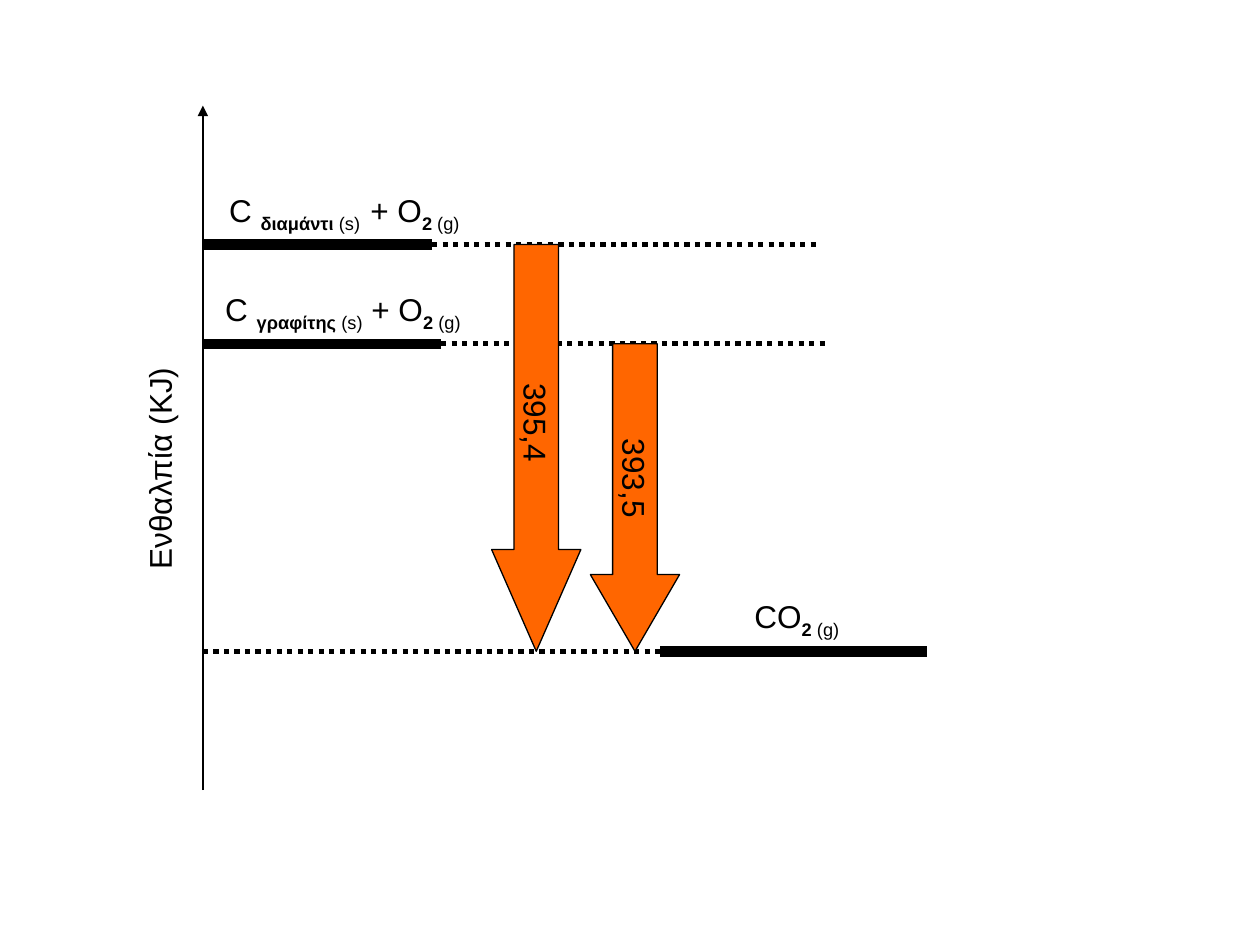
from pptx import Presentation
from pptx.dml.color import RGBColor
from pptx.enum.dml import MSO_LINE
from pptx.enum.shapes import MSO_CONNECTOR, MSO_SHAPE
from pptx.enum.text import MSO_ANCHOR, MSO_AUTO_SIZE, PP_ALIGN
from pptx.oxml.ns import qn
from pptx.util import Cm, Pt
from lxml.etree import SubElement

BLACK = "000000"
ORANGE = "FF6600"
AXIS_X = 4.09
DIAMOND_Y, GRAPHITE_Y, DIOXIDE_Y = 4.93, 6.93, 13.13
LABEL_HEIGHT = 1.02
LABEL_RISE = 1.21
ARROW_WIDTH = 1.8
OXYGEN = [("2 ", True, True), ("(g)", False, True)]


def color(value):
    """Return the colour for a hex string."""
    return RGBColor.from_string(value)


def apply_format(target, values):
    """Set each attribute of the target from a dict."""
    for name, value in values.items():
        setattr(target, name, value)


def add_line(slide, start, end, width, dash=None, arrow=False):
    """Draw a straight black line, optionally dashed or with an arrowhead."""
    points = [Cm(value) for value in (*start, *end)]
    connector = slide.shapes.add_connector(MSO_CONNECTOR.STRAIGHT, *points)
    connector.line.color.rgb = color(BLACK)
    apply_format(connector.line, {"width": Pt(width), "dash_style": dash})
    properties = connector._element.spPr
    if arrow:
        SubElement(connector.line._get_or_add_ln(), qn("a:tailEnd"), type="triangle")
    SubElement(properties, qn("a:effectLst"))


def add_runs(paragraph, runs):
    """Write runs given as text, bold and subscript."""
    for text, bold, subscript in runs:
        run = paragraph.add_run()
        run.text = text
        apply_format(run.font, {"name": "Arial", "size": Pt(18), "bold": bold})
        run.font.color.rgb = color(BLACK)
        if subscript:
            run._r.get_or_add_rPr().set("baseline", "-25000")


def add_label(slide, left, top, width, runs, wrap=False, rotation=0):
    """Add a text box holding one line of runs."""
    lengths = [Cm(value) for value in (left, top, width, LABEL_HEIGHT)]
    label = slide.shapes.add_textbox(*lengths)
    label.rotation = rotation
    apply_format(label.text_frame, {
        "word_wrap": wrap,
        "auto_size": MSO_AUTO_SIZE.SHAPE_TO_FIT_TEXT,
    })
    add_runs(label.text_frame.paragraphs[0], runs)


def add_energy_arrow(slide, center, top, head, text):
    """Add an arrow turned to point from a level down to the dioxide level."""
    length = DIOXIDE_Y - top
    middle = (top + DIOXIDE_Y) / 2
    arrow = slide.shapes.add_shape(
        MSO_SHAPE.RIGHT_ARROW, Cm(center - length / 2),
        Cm(middle - ARROW_WIDTH / 2), Cm(length), Cm(ARROW_WIDTH))
    arrow.rotation = 90
    arrow.adjustments[0] = 0.5
    arrow.adjustments[1] = head
    arrow.shadow.inherit = False
    arrow.fill.solid()
    arrow.fill.fore_color.rgb = color(ORANGE)
    arrow.line.color.rgb = color(BLACK)
    arrow.line.width = Pt(0.75)
    apply_format(arrow.text_frame, {
        "word_wrap": False,
        "vertical_anchor": MSO_ANCHOR.MIDDLE,
    })
    paragraph = arrow.text_frame.paragraphs[0]
    paragraph.alignment = PP_ALIGN.CENTER
    add_runs(paragraph, [(text, False, False)])


def add_level(slide, y, solid, dotted, label_left, label_width, runs):
    """Add an energy level: solid line, dotted line and label."""
    add_line(slide, (solid[0], y), (solid[1], y), 6)
    add_line(slide, (dotted[0], y), (dotted[1], y), 3, MSO_LINE.ROUND_DOT)
    add_label(slide, label_left, y - LABEL_RISE, label_width, runs)


def main():
    """Build the enthalpy diagram and save it."""
    presentation = Presentation()
    apply_format(presentation, {"slide_width": Cm(25.4), "slide_height": Cm(19.05)})
    slide = presentation.slides.add_slide(presentation.slide_layouts[6])

    add_line(slide, (AXIS_X, 15.93), (AXIS_X, 2.13), 0.75, arrow=True)
    add_level(slide, GRAPHITE_Y, (AXIS_X, 8.89), (8.89, 16.69), 4.29, 5.69, [
        ("C ", False, False), ("γραφίτης ", True, True), ("(s)", False, True),
        (" + O", False, False), *OXYGEN])
    add_level(slide, DIAMOND_Y, (AXIS_X, 8.71), (8.71, 16.51), 4.37, 5.72, [
        ("C ", False, False), ("διαμάντι ", True, True), ("(s)  ", False, True),
        ("+ O", False, False), *OXYGEN])
    add_level(slide, DIOXIDE_Y, (13.31, 18.69), (AXIS_X, 13.31), 14.96, 2.34, [
        ("CO", False, False), *OXYGEN])
    add_energy_arrow(slide, 10.81, DIAMOND_Y, 1.14, "395,4")
    add_energy_arrow(slide, 12.8, GRAPHITE_Y, 0.86, "393,5")
    add_label(slide, -1.09, 6.91, 8.61, [("Ενθαλπία (KJ)", False, False)],
              wrap=True, rotation=270)

    presentation.save("out.pptx")


if __name__ == "__main__":
    main()
